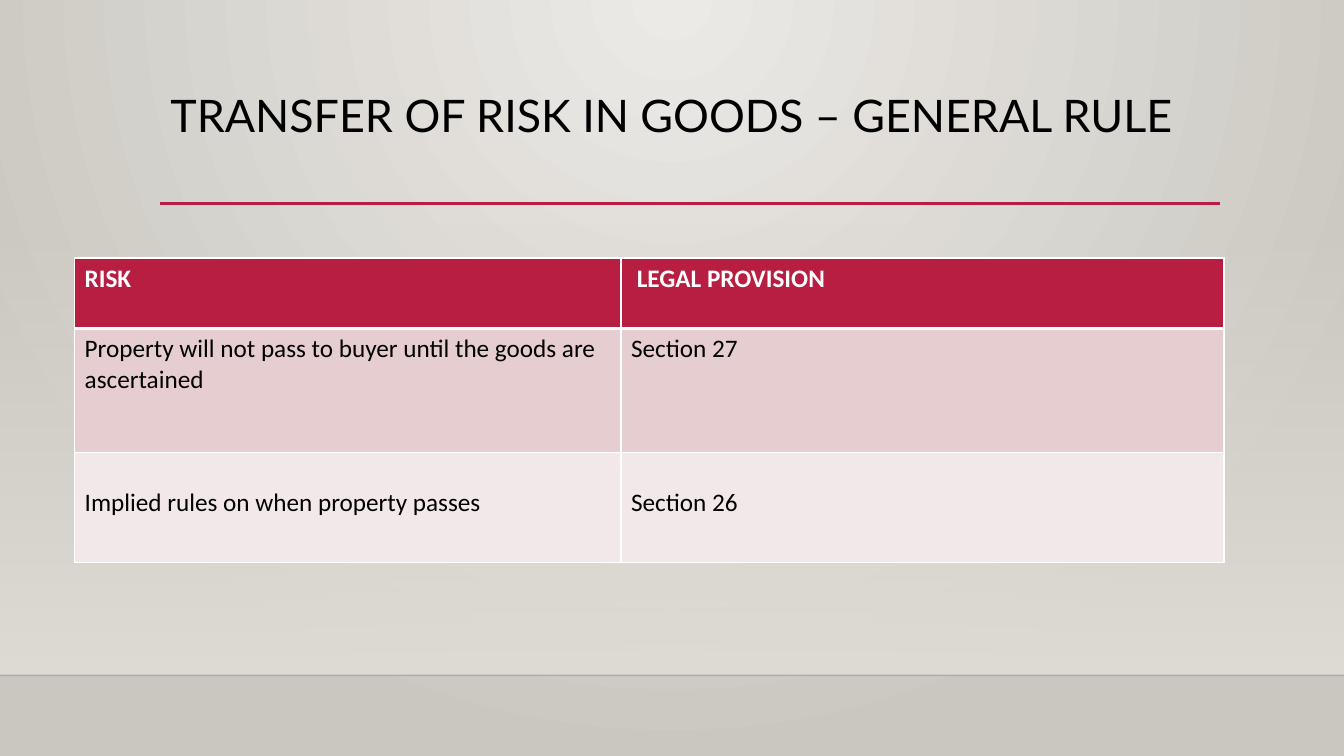
from lxml.etree import SubElement as Sub
from pptx import Presentation
from pptx.dml.color import RGBColor
from pptx.enum.shapes import MSO_CONNECTOR as Link, MSO_SHAPE as Shape
from pptx.enum.text import MSO_ANCHOR as Anchor, PP_ALIGN as Align
from pptx.oxml.ns import qn
from pptx.util import Inches, Pt

WIDE, HIGH = 13.33, 7.5
RED, WHITE, BLACK = "B71E42", "FFFFFF", "000000"
FLOOR = 6.7
LEFT, RULE = 1.59, 2.02
COLS = (5.42, 5.98)
ROWS = (0.7, 1.23, 1.09)
FILLS = (RED, "E6CDCF", "F3E8E9")
CELLS = (
    ("RISK", " LEGAL PROVISION"),
    ("Property will not pass to buyer until the goods are ascertained",
     "Section 27"),
    ("Implied rules on when property passes", "Section 26"),
)


def tint(color, code):
    color.rgb = RGBColor.from_string(code)


def fade(node, share):
    """Give a srgbClr element an opacity in percent."""
    Sub(node, qn("a:alpha"), val=str(share * 1000))


def ramp(fill, stops):
    """Fill with a two-stop gradient and return its XML element."""
    fill.gradient()
    for stop, code in zip(fill.gradient_stops, stops):
        tint(stop.color, code)
    for pos, stop in zip((0, 1), fill.gradient_stops):
        stop.position = pos
    grad = fill._xPr.find(qn("a:gradFill"))
    grad.remove(grad.find(qn("a:lin")))
    return grad


def write(frame, text, size=18, font="Calibri", color=BLACK, bold=False,
          space=None):
    frame.word_wrap = True
    para = frame.paragraphs[0]
    para.alignment = Align.LEFT
    para.line_spacing = space
    run = para.add_run()
    run.text = text
    run.font.size, run.font.name, run.font.bold = Pt(size), font, bold
    tint(run.font.color, color)


def rule(slide, left, right, top, color, width, alpha=100):
    line = slide.shapes.add_connector(
        Link.STRAIGHT, Inches(left), Inches(top), Inches(right), Inches(top))
    line.line.width = Pt(width)
    tint(line.line.color, color)
    props = line._element.spPr
    if alpha < 100:
        fade(next(props.iter(qn("a:srgbClr"))), alpha)
    Sub(props, qn("a:effectLst"))


def edge(cell, side, width):
    line = Sub(cell._tc.get_or_add_tcPr(), qn("a:ln" + side),
               w=str(Pt(width)))
    Sub(Sub(line, qn("a:solidFill")), qn("a:srgbClr"), val=WHITE)


def backdrop(slide):
    grad = ramp(slide.background.fill, ("ECEAE7", "CAC7C1"))
    ring = Sub(grad, qn("a:path"), path="circle")
    Sub(ring, qn("a:fillToRect"), l="43000", t="0", r="43000", b="100000")

    top = 2.21
    wall = slide.shapes.add_shape(
        Shape.RECTANGLE, 0, Inches(top), Inches(WIDE), Inches(FLOOR - top))
    wall.shadow.inherit = False
    wall.line.fill.background()
    grad = ramp(wall.fill, ("DFDBD5", "DFDBD5"))
    fade(next(grad.iter(qn("a:srgbClr"))), 0)
    Sub(grad, qn("a:lin"), ang="5400000", scaled="0")
    rule(slide, 0, WIDE, FLOOR, "000001", 1, alpha=20)


def heading(slide, text):
    title = slide.shapes.title
    title.left, title.top = Inches(LEFT), Inches(0.88)
    title.width, title.height = Inches(10.5), Inches(1.15)
    title.text_frame.vertical_anchor = Anchor.TOP
    write(title.text_frame, text, size=32, font="Lato", space=0.9)
    rule(slide, LEFT, 12.1, RULE, RED, 2.5)


def grid(slide):
    table = slide.shapes.add_table(
        len(ROWS), len(COLS), Inches(0.74), Inches(2.56),
        Inches(sum(COLS)), Inches(sum(ROWS))).table
    for col, width in zip(table.columns, COLS):
        col.width = Inches(width)
    for i, (row, height) in enumerate(zip(table.rows, ROWS)):
        row.height = Inches(height)
        for cell, text in zip(row.cells, CELLS[i]):
            for side in "LRTB":
                thick = (side, i) in (("B", 0), ("T", 1))
                edge(cell, side, 3 if thick else 1)
            cell.fill.solid()
            tint(cell.fill.fore_color, FILLS[i])
            cell.margin_top = Inches(0.35 if i == 2 else 0.05)
            write(cell.text_frame, text, color=BLACK if i else WHITE,
                  bold=i == 0)


def main():
    deck = Presentation()
    deck.slide_width, deck.slide_height = Inches(WIDE), Inches(HIGH)
    slide = deck.slides.add_slide(deck.slide_layouts.get_by_name("Title Only"))
    backdrop(slide)
    heading(slide, "TRANSFER OF RISK IN GOODS – GENERAL RULE")
    grid(slide)
    deck.save("out.pptx")


if __name__ == "__main__":
    main()
